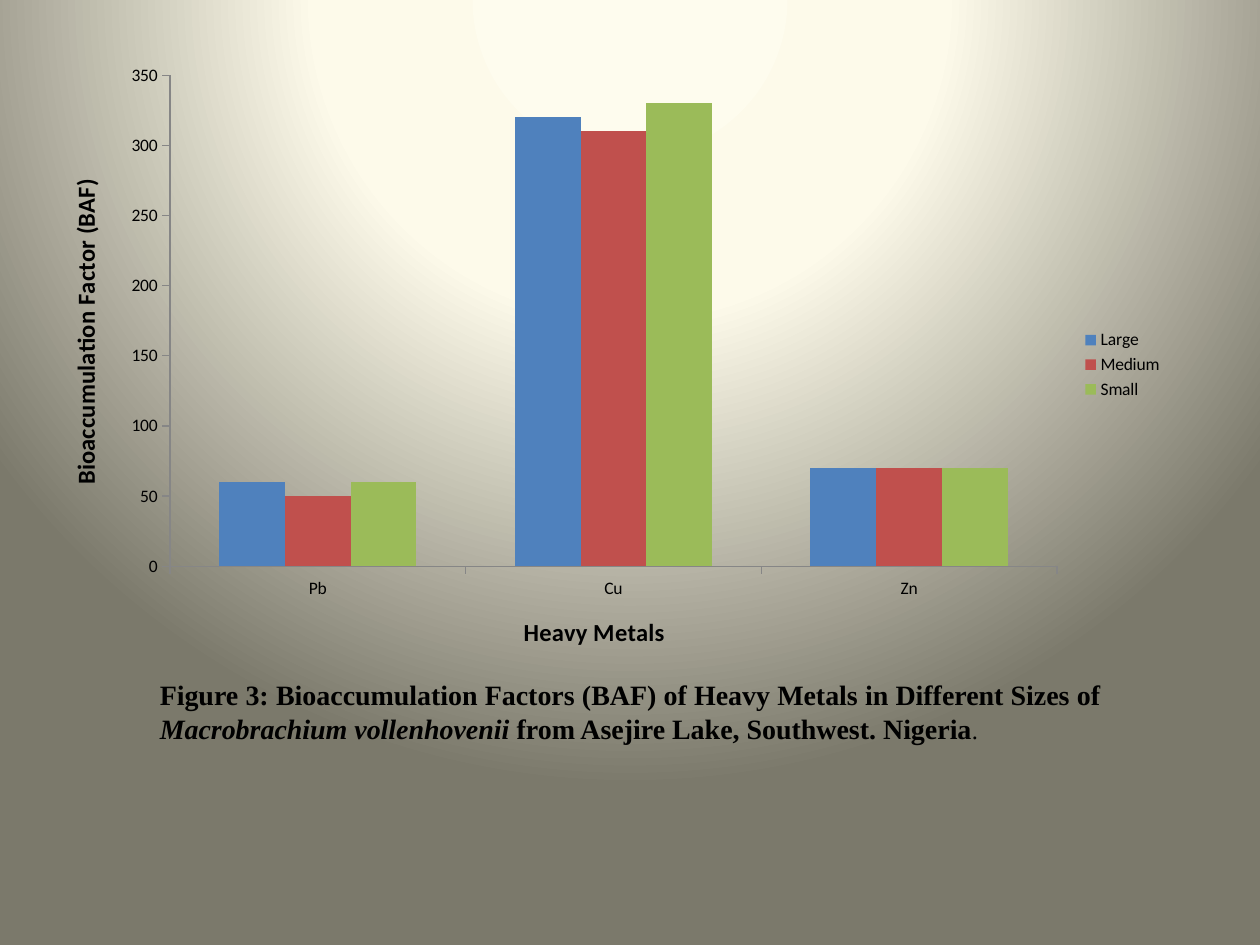
import pptx
import pptx.chart.data
import pptx.dml.color
import pptx.enum.chart
import pptx.enum.text
import pptx.oxml
import pptx.oxml.ns
import pptx.util
from pptx.util import Inches

RGB = pptx.dml.color.RGBColor
BLACK = RGB(0x00, 0x00, 0x00)
GRAY = RGB(0x86, 0x86, 0x86)
BLUE = RGB(0x4F, 0x81, 0xBD)
RED = RGB(0xC0, 0x50, 0x4D)
GREEN = RGB(0x9B, 0xBB, 0x59)
GLOW = ((0, RGB(0xFE, 0xFC, 0xEE)), (40, RGB(0xFD, 0xFA, 0xEA)),
        (100, RGB(0x7B, 0x79, 0x6B)))

METALS = ("Pb", "Cu", "Zn")
SIZES = (
    ("Large", (60, 320, 70), BLUE),
    ("Medium", (50, 310, 70), RED),
    ("Small", (60, 330, 70), GREEN),
)
# text, size, bold, italic
CAPTION = (
    ("Figure 3: Bioaccumulation Factors (BAF) of Heavy Metals in Different Sizes of ",
     16, True, False),
    ("Macrobrachium vollenhovenii", 16, True, True),
    (" from Asejire Lake, Southwest. Nigeria", 16, True, False),
    (".", 14, False, False),
)


def set_font(font, name, size, bold=False, italic=False):
    font.name = name
    font.size = pptx.util.Pt(size)
    font.bold = bold
    font.italic = italic
    font.color.rgb = BLACK


def paint_back(slide):
    """Fill the background with a round glow centred above the slide."""
    slide.background.fill.solid()
    stops = "".join(
        f'<a:gs pos="{pos * 1000}"><a:srgbClr val="{color}"/></a:gs>'
        for pos, color in GLOW)
    grad = pptx.oxml.parse_xml(
        f'<a:gradFill {pptx.oxml.ns.nsdecls("a")} rotWithShape="1">'
        f'<a:gsLst>{stops}</a:gsLst><a:path path="circle">'
        '<a:fillToRect l="50000" t="-80000" r="50000" b="180000"/>'
        '</a:path></a:gradFill>')
    props = slide.element.find(".//" + pptx.oxml.ns.qn("p:bgPr"))
    props.replace(props[0], grad)


def style_axis(axis, title):
    axis.has_major_gridlines = False
    axis.major_tick_mark = pptx.enum.chart.XL_TICK_MARK.OUTSIDE
    axis.minor_tick_mark = pptx.enum.chart.XL_TICK_MARK.NONE
    axis.format.line.color.rgb = GRAY
    set_font(axis.tick_labels.font, "Calibri", 10)
    axis.has_title = True
    para = axis.axis_title.text_frame.paragraphs[0]
    para.text = title
    set_font(para.font, "Calibri", 14, bold=True)


def add_bars(slide, left, top, width, height):
    data = pptx.chart.data.CategoryChartData()
    data.categories = METALS
    for name, vals, _ in SIZES:
        data.add_series(name, vals)
    chart = slide.shapes.add_chart(
        pptx.enum.chart.XL_CHART_TYPE.COLUMN_CLUSTERED,
        left, top, width, height, data).chart
    set_font(chart.font, "Calibri", 10)
    chart.has_title = False
    chart.has_legend = True
    chart.legend.position = pptx.enum.chart.XL_LEGEND_POSITION.RIGHT
    chart.legend.include_in_layout = False
    set_font(chart.legend.font, "Calibri", 10)

    plot = chart.plots[0]
    plot.vary_by_categories = False
    plot.gap_width = 150
    plot.overlap = 0
    for series, (_, _, color) in zip(plot.series, SIZES):
        series.format.fill.solid()
        series.format.fill.fore_color.rgb = color

    style_axis(chart.category_axis, "Heavy Metals")
    style_axis(chart.value_axis, "Bioaccumulation Factor (BAF)")
    chart.value_axis.minimum_scale = 0
    chart.value_axis.maximum_scale = 350
    chart.value_axis.major_unit = 50


def add_caption(slide, left, top, width, height):
    frame = slide.shapes.add_textbox(left, top, width, height).text_frame
    frame.word_wrap = True
    frame.auto_size = pptx.enum.text.MSO_AUTO_SIZE.SHAPE_TO_FIT_TEXT
    para = frame.paragraphs[0]
    para.alignment = pptx.enum.text.PP_ALIGN.JUSTIFY
    for text, size, bold, italic in CAPTION:
        run = para.add_run()
        run.text = text
        set_font(run.font, "Times New Roman", size, bold, italic)


def main():
    deck = pptx.Presentation()
    deck.slide_width = Inches(10)
    deck.slide_height = Inches(7.5)
    slide = deck.slides.add_slide(deck.slide_layouts.get_by_name("Blank"))
    paint_back(slide)
    add_caption(slide, Inches(1.17), Inches(5.33), Inches(7.67), Inches(0.64))
    add_bars(slide, Inches(0.33), Inches(0.42), Inches(9), Inches(4.95))
    deck.save("out.pptx")


if __name__ == "__main__":
    main()
